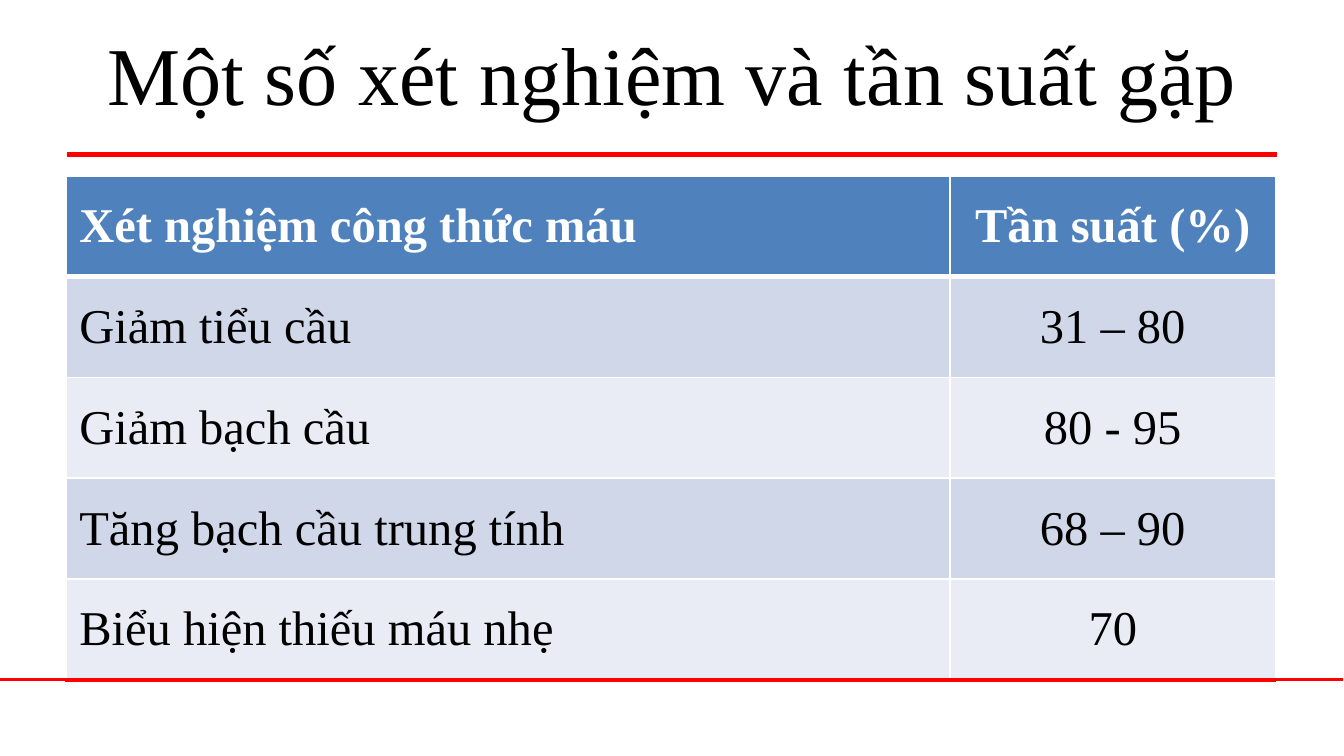
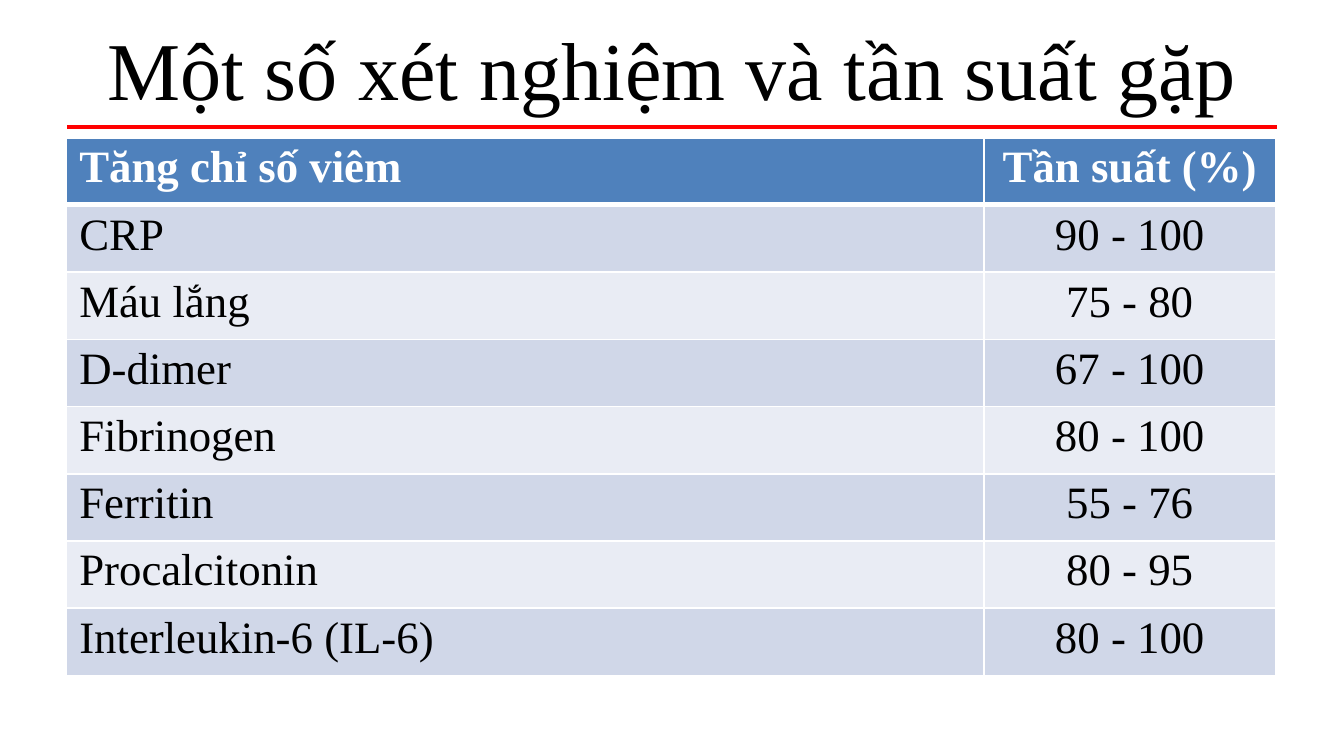
from dataclasses import dataclass

from lxml import etree
from pptx import Presentation
from pptx.dml.color import RGBColor
from pptx.enum.shapes import MSO_CONNECTOR
from pptx.enum.text import MSO_ANCHOR, MSO_AUTO_SIZE, PP_ALIGN
from pptx.oxml.ns import qn
from pptx.util import Inches, Pt

LEFT, CENTER = PP_ALIGN.LEFT, PP_ALIGN.CENTER
TOP = MSO_ANCHOR.TOP
GROW = MSO_AUTO_SIZE.SHAPE_TO_FIT_TEXT
LINE = MSO_CONNECTOR.STRAIGHT

# A 16:9 slide and its grid of 20 columns by 45 rows
WIDTH = Inches(10)
HEIGHT = WIDTH * 9 // 16
COL, ROW = WIDTH / 20, HEIGHT / 45


@dataclass(frozen=True)
class Theme:
    font: str = "Times New Roman"
    ink: str = "000000"
    white: str = "FFFFFF"
    red: str = "FF0000"
    head: str = "4F81BC"
    bands: tuple = ("D0D7E8", "E9ECF4")
    title: float = 44
    rule: float = 2.25
    thin: float = 1
    thick: float = 3
    foot: float = 1.5


THEME = Theme()
TITLE = "Một số xét nghiệm và tần suất gặp"

BLOOD = {
    "title": 1.3, "rule": 9.2,
    "box": (-0.02, 10.46, 20, 30), "cols": (1, 13.16, 4.84, 1),
    "size": 26, "pad": 12.8, "sides": True,
    "rows": [
        ("Xét nghiệm công thức máu", "Tần suất (%)"),
        ("Giảm tiểu cầu", "31 – 80"),
        ("Giảm bạch cầu", "80 - 95"),
        ("Tăng bạch cầu trung tính", "68 – 90"),
        ("Biểu hiện thiếu máu nhẹ", "70"),
    ],
}
MARKERS = {
    "title": 1.04, "rule": 7.58,
    "box": (0.98, 8.2, 18, 32), "cols": (13.66, 4.34),
    "size": 24, "pad": 2.8, "sides": False,
    "rows": [
        ("Tăng chỉ số viêm", "Tần suất (%)"),
        ("CRP", "90 - 100"),
        ("Máu lắng", "75 - 80"),
        ("D-dimer", "67 - 100"),
        ("Fibrinogen", "80 - 100"),
        ("Ferritin", "55 - 76"),
        ("Procalcitonin", "80 - 95"),
        ("Interleukin-6 (IL-6)", "80 - 100"),
    ],
}


def place(x, y, w, h):
    """Turn grid columns and rows into slide lengths."""
    return int(x * COL), int(y * ROW), int(w * COL), int(h * ROW)


def apply(item, form):
    for name, value in form.items():
        setattr(item, name, value)


def write(frame, text, size, color, bold=False, align=LEFT, before=0, indent=0):
    para = frame.paragraphs[0]
    apply(para, {"alignment": align, "space_before": Pt(before)})
    para._p.get_or_add_pPr().set("marL", str(Inches(indent)))
    run = para.add_run()
    run.text = text
    apply(run.font, {"name": THEME.font, "size": Pt(size), "bold": bold})
    run.font.color.rgb = RGBColor.from_string(color)


def edge(cell, sides):
    """Draw cell borders; sides maps L, R, T and B to (colour, points)."""
    props = cell._tc.get_or_add_tcPr()
    for spot, side in enumerate("LRTB"):
        color, width = sides[side]
        line = etree.Element(qn(f"a:ln{side}"), w=str(Pt(width)))
        fill = etree.SubElement(line, qn("a:solidFill"))
        etree.SubElement(fill, qn("a:srgbClr"), val=color)
        props.insert(spot, line)


def add_title(slide, box):
    frame = slide.shapes.add_textbox(*place(*box)).text_frame
    apply(frame, {"margin_left": 0, "margin_right": 0, "margin_bottom": 0,
                  "margin_top": Inches(0.01), "word_wrap": True,
                  "vertical_anchor": TOP, "auto_size": GROW})
    write(frame, TITLE, THEME.title, THEME.ink, before=1.1, indent=0.01)


def add_rule(slide, box):
    x, y, w, _ = place(*box)
    rule = slide.shapes.add_connector(LINE, x, y, x + w, y)
    rule.line.color.rgb = RGBColor.from_string(THEME.red)
    rule.line.width = Pt(THEME.rule)
    etree.SubElement(rule._element.spPr, qn("a:effectLst"))


def add_sides(table, thin):
    """Merge the outer columns into clear strips with a red foot."""
    last = len(table.rows) - 1
    for col in (0, len(table.columns) - 1):
        table.cell(0, col).merge(table.cell(last, col))
        for row in range(last + 1):
            cell = table.cell(row, col)
            cell.fill.background()
            foot = (THEME.red, THEME.foot) if row in (0, last) else thin
            edge(cell, {"L": thin, "R": thin, "T": thin, "B": foot})


def add_grid(slide, box, data):
    rows, cols = data["rows"], data["cols"]
    x, y, w, h = place(*box)
    table = slide.shapes.add_table(len(rows), len(cols), x, y, w, h).table
    apply(table, {"first_row": False, "horz_banding": False})
    for col, share in zip(table.columns, cols):
        col.width = int(w * share / sum(cols))
    for row in table.rows:
        row.height = h // len(rows)

    thin, thick = (THEME.white, THEME.thin), (THEME.white, THEME.thick)
    start, last = int(data["sides"]), len(rows) - 1
    for r, texts in enumerate(rows):
        head = r == 0
        back = THEME.head if head else THEME.bands[(r - 1) % 2]
        foot = thick if head else thin
        if data["sides"] and r == last:
            foot = (THEME.red, THEME.rule)
        for c, text in enumerate(texts):
            cell = table.cell(r, c + start)
            apply(cell, {"margin_left": 0, "margin_right": 0, "margin_bottom": 0,
                         "margin_top": Pt(data["pad"]), "vertical_anchor": TOP})
            cell.fill.solid()
            cell.fill.fore_color.rgb = RGBColor.from_string(back)
            edge(cell, {"L": thin, "R": thin, "T": thick if r == 1 else thin, "B": foot})
            write(cell.text_frame, text, data["size"],
                  THEME.white if head else THEME.ink, head,
                  CENTER if c else LEFT, data["pad"], 0 if c else 0.1)
    if data["sides"]:
        add_sides(table, thin)


def add_page(deck, data):
    slide = deck.slides.add_slide(deck.slide_layouts[6])
    add_title(slide, (1.58, data["title"], 16.86, 6.1))
    add_grid(slide, data["box"], data)
    add_rule(slide, (1, data["rule"], 18, 0))


def main():
    deck = Presentation()
    apply(deck, {"slide_width": WIDTH, "slide_height": HEIGHT})
    for data in (BLOOD, MARKERS):
        add_page(deck, data)
    deck.save("out.pptx")


if __name__ == "__main__":
    main()
